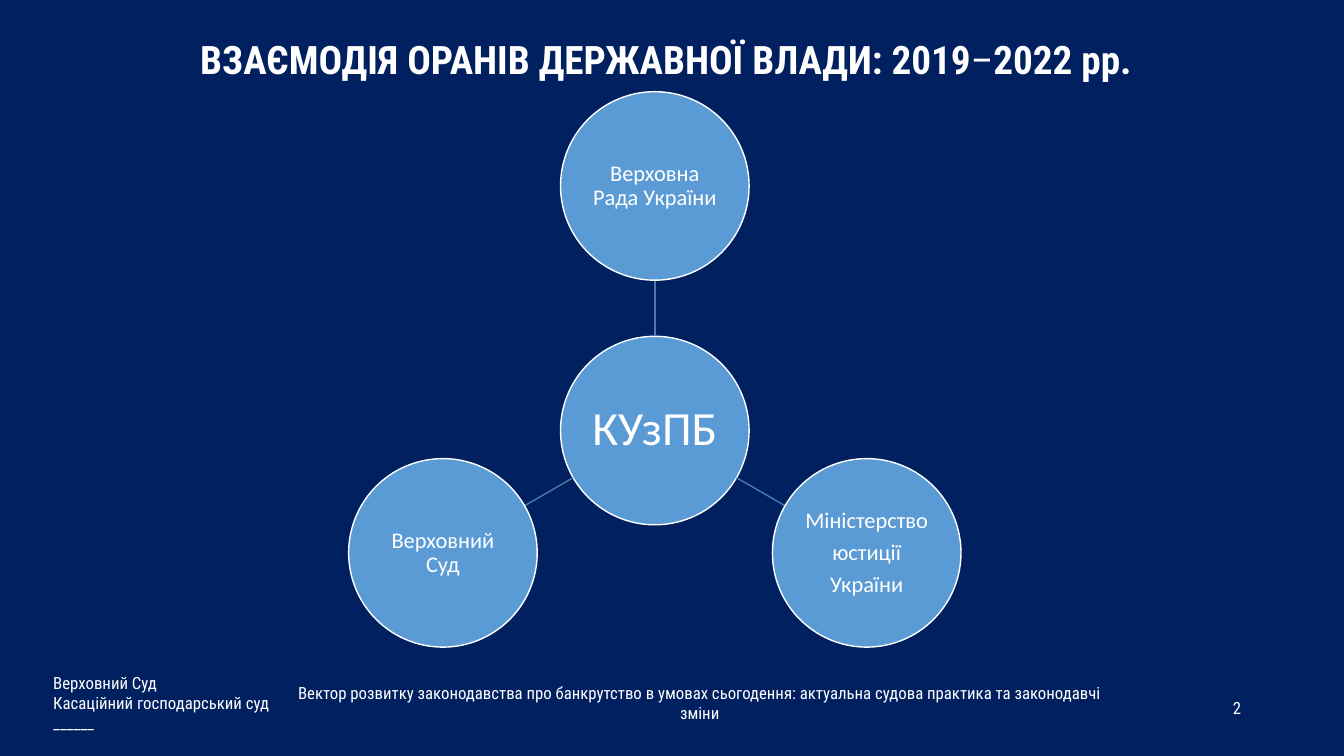
from math import cos, radians, sin

from lxml import etree
from pptx import Presentation
from pptx.dml.color import RGBColor
from pptx.enum.shapes import MSO_CONNECTOR, MSO_SHAPE
from pptx.enum.text import MSO_ANCHOR, MSO_AUTO_SIZE, PP_ALIGN
from pptx.oxml.ns import qn
from pptx.util import Inches, Pt

LEFT, CENTER = PP_ALIGN.LEFT, PP_ALIGN.CENTER
MIDDLE, BOTTOM = MSO_ANCHOR.MIDDLE, MSO_ANCHOR.BOTTOM
NO_AUTOFIT = MSO_AUTO_SIZE.NONE
OVAL, STRAIGHT = MSO_SHAPE.OVAL, MSO_CONNECTOR.STRAIGHT

NAVY, WHITE, BLUE, STEEL = "002060", "FFFFFF", "5B9BD5", "497CAB"
HEADING_FONT, DIAGRAM_FONT = "Roboto Condensed", "Calibri"
TITLE_PARTS = [
    ("ВЗАЄМОДІЯ ОРАНІВ ДЕРЖАВНОЇ ВЛАДИ: 2019", True),
    ("–", False),
    ("2022 рр.", True),
]
HUB = "КУзПБ"
# Angle in degrees, clockwise from the right
BODIES = [
    (-90, "Верховна Рада України"),
    (30, "Міністерство\nюстиції\nУкраїни"),
    (150, "Верховний Суд"),
]
COURT = "Верховний Суд\nКасаційний господарський суд\n______"
TOPIC = ("Вектор розвитку законодавства про банкрутство в умовах сьогодення: "
         "актуальна судова практика та законодавчі зміни")


def color(value):
    return RGBColor.from_string(value)


def format_span(span, font, size, bold=False):
    span.font.name = font
    span.font.size = Pt(size)
    span.font.bold = bold
    span.font.color.rgb = color(WHITE)


def fill_text(frame, text, font, size, align):
    frame.text = text
    frame.word_wrap = True
    frame.vertical_anchor = MIDDLE
    for para in frame.paragraphs:
        para.alignment = align
        for span in para.runs:
            format_span(span, font, size)


def add_title(page, box):
    title = page.shapes.title
    title.left, title.top, title.width, title.height = map(Inches, box)
    frame = title.text_frame
    frame.auto_size = NO_AUTOFIT
    frame.word_wrap = True
    frame.vertical_anchor = BOTTOM
    frame.margin_top = frame.margin_bottom = 0
    para = frame.paragraphs[0]
    para.alignment = CENTER
    para.line_spacing = 0.9
    for text, bold in TITLE_PARTS:
        span = para.add_run()
        span.text = text
        format_span(span, HEADING_FONT, 28, bold)


def add_circle(page, x, y, diameter, text, size):
    radius = diameter / 2
    circle = page.shapes.add_shape(OVAL, Inches(x - radius), Inches(y - radius),
                                   Inches(diameter), Inches(diameter))
    circle.shadow.inherit = False
    circle.fill.solid()
    circle.fill.fore_color.rgb = color(BLUE)
    circle.line.color.rgb = color(WHITE)
    circle.line.width = Pt(1)
    frame = circle.text_frame
    fill_text(frame, text, DIAGRAM_FONT, size, CENTER)
    frame.margin_left = frame.margin_right = Inches(0.01)
    frame.margin_top = frame.margin_bottom = Inches(0.01)
    for para in frame.paragraphs:
        para.line_spacing = 0.9
        para.space_after = Pt(0.35 * size)


def add_spoke(page, start, end):
    spoke = page.shapes.add_connector(STRAIGHT, *map(Inches, start + end))
    spoke.line.color.rgb = color(STEEL)
    spoke.line.width = Pt(1)
    etree.SubElement(spoke._element.spPr, qn("a:effectLst"))


def add_radial_diagram(page, box):
    left, top, width, height = box
    diameter = 1.87
    # Three equal arms: the height spans 1.5 arms and one circle
    arm = (height - diameter) / 1.5
    x, y = left + width / 2, top + diameter / 2 + arm

    def on_ray(angle, distance):
        turn = radians(angle)
        return x + distance * cos(turn), y + distance * sin(turn)

    add_circle(page, x, y, diameter, HUB, 34)
    for angle, name in BODIES:
        add_spoke(page, on_ray(angle, diameter / 2),
                  on_ray(angle, arm - diameter / 2))
        add_circle(page, *on_ray(angle, arm), diameter, name, 16)


def add_footer(page, box):
    left, top, width, height = box
    # Court, topic and page number: offset, drop, width, height
    parts = [
        (0, 0, 2.54, height, COURT, LEFT),
        (2.24, 0.13, 8.54, 0.49, TOPIC, CENTER),
        (width - 0.62, 0.18, 0.62, 0.49, "2", CENTER),
    ]
    for offset, drop, part_width, part_height, text, align in parts:
        part = page.shapes.add_textbox(Inches(left + offset), Inches(top + drop),
                                       Inches(part_width), Inches(part_height))
        fill_text(part.text_frame, text, HEADING_FONT, 12, align)


def main():
    deck = Presentation()
    deck.slide_width, deck.slide_height = Inches(13.33), Inches(7.5)
    page = deck.slides.add_slide(deck.slide_layouts[5])
    page.background.fill.solid()
    page.background.fill.fore_color.rgb = color(NAVY)

    add_title(page, (0.43, 0.25, 12.35, 0.57))
    add_radial_diagram(page, (3.46, 0.91, 6.07, 5.51))
    add_footer(page, (0.43, 6.6, 12.15, 0.75))
    deck.save("out.pptx")


if __name__ == "__main__":
    main()
